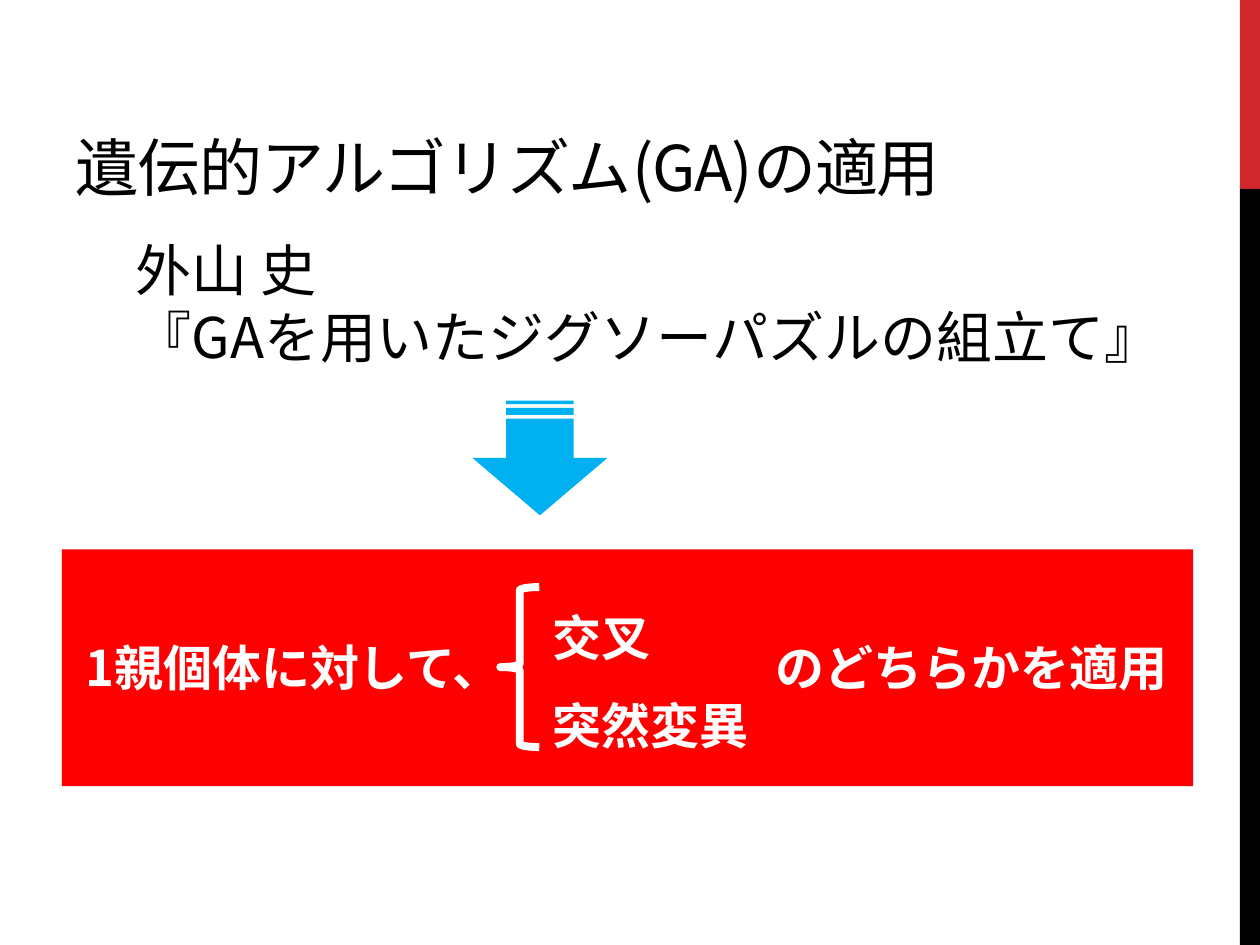
from lxml.etree import SubElement
from pptx import Presentation
from pptx.dml.color import RGBColor
from pptx.enum.shapes import MSO_SHAPE as Shape
from pptx.enum.text import MSO_ANCHOR as Anchor, MSO_AUTO_SIZE as Fit
from pptx.oxml.ns import qn
from pptx.util import Inches, Pt

FONT = "Noto Sans CJK JP"
WHITE, BLACK, RED = "FFFFFF", "000000", "FF0000"


def color(code):
    return RGBColor.from_string(code)


def place(box):
    return [Inches(n) for n in box]


def add_block(slide, kind, box, fill, turn=0):
    shape = slide.shapes.add_shape(kind, *place(box))
    shape.shadow.inherit = False
    shape.fill.solid()
    shape.fill.fore_color.rgb = color(fill)
    shape.line.fill.background()
    shape.rotation = turn


def add_brace(slide, box):
    brace = slide.shapes.add_shape(Shape.LEFT_BRACE, *place(box))
    brace.shadow.inherit = False
    brace.fill.background()
    brace.line.color.rgb = color(WHITE)
    brace.line.width = Pt(4.5)


def style(para, size, code, bold, track):
    """Set the font for Latin and Japanese; track is in hundredths of a point."""
    font = para.font
    font.size, font.bold, font.name = Pt(size), bold, FONT
    font.color.rgb = color(code)
    props = para._p.get_or_add_pPr().get_or_add_defRPr()
    SubElement(props, qn("a:ea")).set("typeface", FONT)
    if track:
        props.set("spc", str(track))


def add_text(slide, box, lines, size, code=WHITE, bold=False, wrap=False,
             anchor=Anchor.TOP, space=None, track=0):
    frame = slide.shapes.add_textbox(*place(box)).text_frame
    frame.word_wrap = wrap
    frame.auto_size = Fit.NONE if anchor == Anchor.BOTTOM else Fit.SHAPE_TO_FIT_TEXT
    frame.vertical_anchor = anchor
    frame.text = "\n".join(lines)
    for para in frame.paragraphs:
        para.line_spacing = space
        style(para, size, code, bold, track)


def main():
    deck = Presentation()
    deck.slide_width, deck.slide_height = Inches(10), Inches(7.5)
    slide = deck.slides.add_slide(deck.slide_layouts[6])

    add_block(slide, Shape.RECTANGLE, (9.84, 0, 0.16, 1.5), "D1282E")
    add_block(slide, Shape.RECTANGLE, (9.84, 1.5, 0.16, 6), BLACK)
    add_text(slide, (0.5, 0.17, 7.41, 1.5), ["遺伝的アルゴリズム(GA)の適用"], 36,
             BLACK, wrap=True, anchor=Anchor.BOTTOM, track=-60)
    add_text(slide, (0.98, 1.82, 8.46, 1.18),
             ["外山 史", "『GAを用いたジグソーパズルの組立て』"], 32, BLACK, wrap=True)

    add_block(slide, Shape.RECTANGLE, (0.49, 4.36, 8.98, 1.88), RED)
    add_block(slide, Shape.STRIPED_RIGHT_ARROW, (3.83, 3.1, 0.91, 1.07), "00B0F0", 90)
    add_text(slide, (0.58, 5.01, 3.59, 0.57), ["1親個体に対して、"], 28, bold=True)
    add_text(slide, (6.06, 5.01, 3.34, 0.57), ["のどちらかを適用"], 28, bold=True)
    add_brace(slide, (3.97, 4.66, 0.31, 1.27))
    add_text(slide, (4.29, 4.54, 1.77, 1.46), ["交叉", "突然変異"], 28, bold=True, space=1.5)

    deck.save("out.pptx")


if __name__ == "__main__":
    main()
